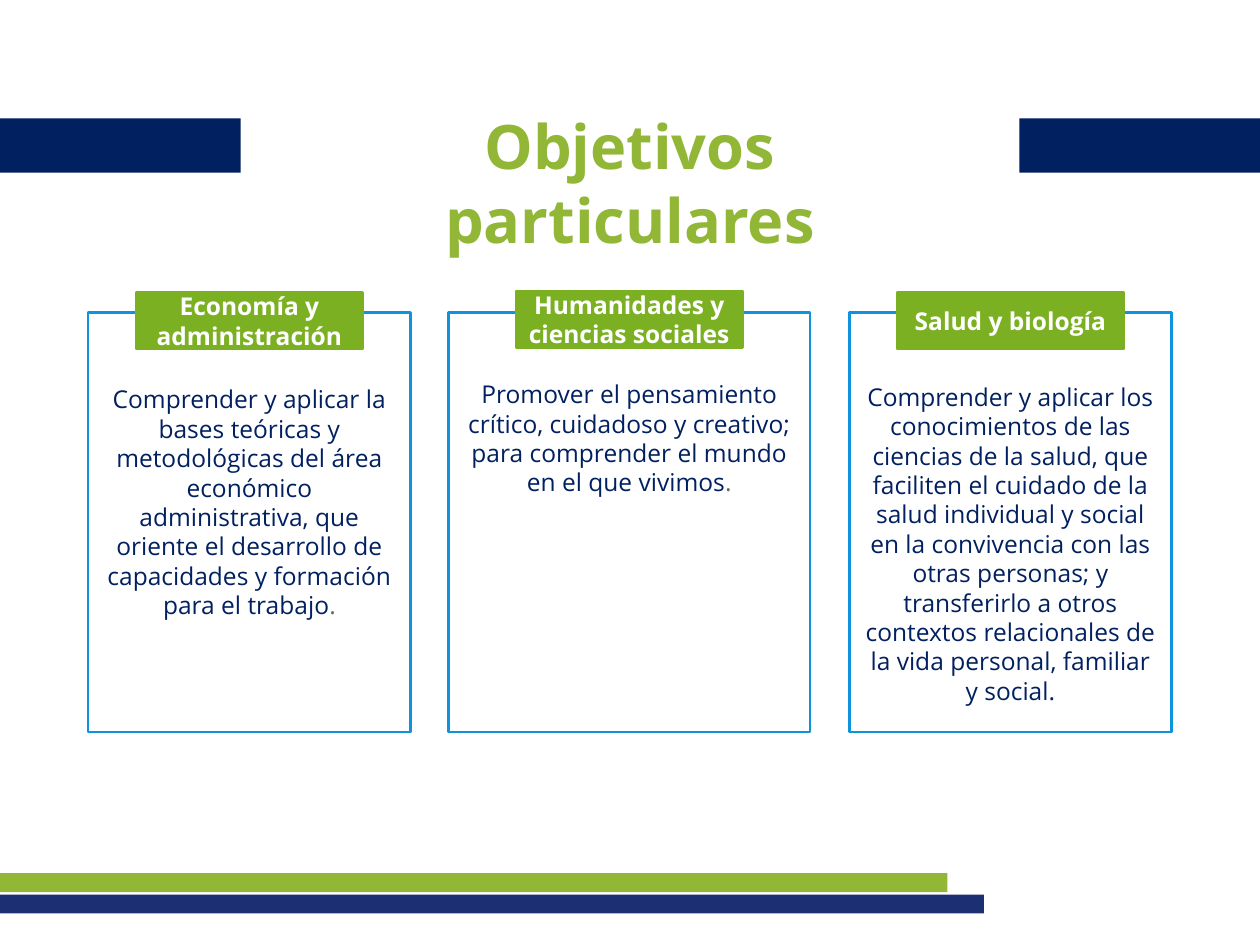
from collections import namedtuple

from pptx import Presentation
from pptx.dml.color import RGBColor
from pptx.enum.shapes import MSO_SHAPE as Preset
from pptx.enum.text import MSO_ANCHOR as Anchor, PP_ALIGN as Align
from pptx.util import Inches, Pt

COLUMNS, ROWS = 100, 75
UNIT = Inches(0.1)
FONT = "Open Sans"
COLORS = {
    "title": "92B636",
    "footer": "1B2F72",
    "navy": "002060",
    "tag": "7CB023",
    "frame": "1093DD",
    "white": "FFFFFF",
    "gray": "666666",
}

Box = namedtuple("Box", "left top width height")
Card = namedtuple("Card", "left width tag_rise text_drop heading goal stop")

CARDS = [
    Card(7, 25.6, 1.6, 5.7, "Economía y administración",
         "Comprender y aplicar la bases teóricas y metodológicas del área económico "
         "administrativa, que oriente el desarrollo de capacidades y formación para el trabajo", "."),
    Card(35.6, 28.7, 1.7, 5.3, "Humanidades y ciencias sociales",
         "Promover el pensamiento crítico, cuidadoso y creativo; para comprender el mundo "
         "en el que vivimos", "."),
    Card(67.4, 25.6, 1.6, 5.5, "Salud y biología",
         "Comprender y aplicar los conocimientos de las ciencias de la salud, que faciliten "
         "el cuidado de la salud individual y social en la convivencia con las otras personas; "
         "y transferirlo a otros contextos relacionales de la vida personal, familiar y social.", ""),
]


def color(name):
    return RGBColor.from_string(COLORS[name])


def emu(box):
    return [round(length * UNIT) for length in box]


def add_block(shapes, box, fill=None, line=None, preset=Preset.RECTANGLE):
    block = shapes.add_shape(preset, *emu(box))
    block.shadow.inherit = False
    if fill:
        block.fill.solid()
        block.fill.fore_color.rgb = color(fill)
    else:
        block.fill.background()
    if line:
        block.line.color.rgb = color(line)
        block.line.width = Pt(1.5)
    else:
        block.line.fill.background()
    return block


def write(frame, runs, size, bold=False, anchor=Anchor.TOP):
    frame.word_wrap = True
    frame.vertical_anchor = anchor
    paragraph = frame.paragraphs[0]
    paragraph.alignment = Align.CENTER
    for text, ink in runs:
        run = paragraph.add_run()
        run.text = text
        run.font.name = FONT
        run.font.size = Pt(size)
        run.font.bold = bold
        run.font.color.rgb = color(ink)


def set_margins(frame, top=1):
    frame.margin_left = frame.margin_right = frame.margin_bottom = UNIT
    frame.margin_top = round(top * UNIT)


def add_footer(slide, box):
    stripe = 1.5
    add_block(slide.shapes, Box(box.left - 2.9, box.top, box.width, stripe), "title")
    add_block(slide.shapes, Box(box.left, box.top + box.height - stripe, box.width, stripe), "footer")


def add_header(slide, box):
    title_width, band_width = 52.4, 19.1
    title_left = box.left + (box.width - title_width) / 2
    title = slide.shapes.add_textbox(*emu(Box(title_left, box.top, title_width, box.height)))
    write(title.text_frame, [("Objetivos particulares", "title")], 35, bold=True)
    for left in (box.left, box.left + box.width - band_width):
        add_block(slide.shapes, Box(left, box.top + 1.3, band_width, 4.3), "navy")


def add_card(slide, box, card):
    shapes = slide.shapes.add_group_shape().shapes
    panel = add_block(shapes, box, line="frame", preset=Preset.ROUND_2_SAME_RECTANGLE)
    panel.adjustments[0] = panel.adjustments[1] = 0
    set_margins(panel.text_frame, card.text_drop)
    runs = [(card.goal, "navy")]
    if card.stop:
        runs.append((card.stop, "gray"))
    write(panel.text_frame, runs, 14)

    tag_width = 18
    tag_left = box.left + (box.width - tag_width) / 2
    tag = add_block(shapes, Box(tag_left, box.top - card.tag_rise, tag_width, 4.5), "tag", "tag")
    set_margins(tag.text_frame)
    write(tag.text_frame, [(card.heading, "white")], 14, bold=True, anchor=Anchor.MIDDLE)


def main():
    deck = Presentation()
    deck.slide_width = COLUMNS * UNIT
    deck.slide_height = ROWS * UNIT
    slide = deck.slides.add_slide(deck.slide_layouts[6])
    add_footer(slide, Box(0, 69.3, 78.1, 3.2))
    add_header(slide, Box(0, 8.1, COLUMNS, 6.9))
    for card in CARDS:
        add_card(slide, Box(card.left, 24.8, card.width, 33.3), card)
    deck.save("out.pptx")


if __name__ == "__main__":
    main()
